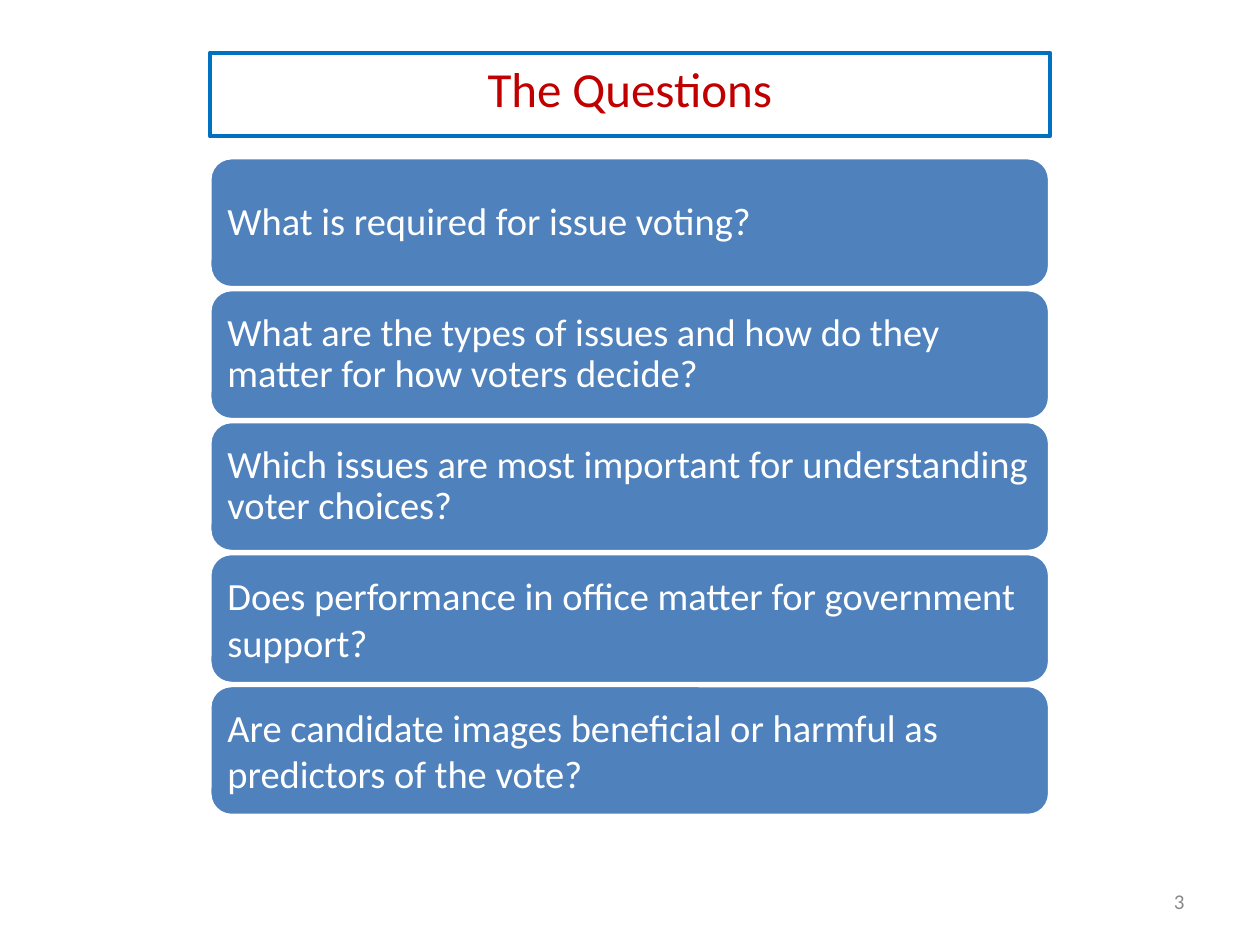
from pptx import Presentation
from pptx.dml.color import RGBColor
from pptx.enum import shapes, text
from pptx.util import Cm, Pt

# Content: question and line spacing
TITLE = "The Questions"
QUESTIONS = [
    ("What is required for issue voting?", 0.9),
    ("What are the types of issues and how do they matter for how voters decide?", 0.9),
    ("Which issues are most important for understanding voter choices?", 0.9),
    ("Does performance in office matter for government support?", 1.0),
    ("Are candidate images beneficial or harmful as predictors of the vote?", 1.0),
]
PAGE_NUMBER = "3"

THEME = {
    "font": "Calibri",
    "title": {"size": 28, "color": "C00000"},
    "question": {"size": 22, "color": "FFFFFF"},
    "number": {"size": 12, "color": "898989"},
    "title_line": "0070C0",
    "panel": "4F81BD",
    "panel_line": "FFFFFF",
}

# Layout
LEFT, WIDTH = Cm(4.23), Cm(16.93)
PANEL_TOP, PANEL_HEIGHT, PANEL_PITCH = Cm(3.18), Cm(2.62), Cm(2.66)
INSET = Cm(0.23)


def place(sp, left, top, width, height):
    sp.left, sp.top, sp.width, sp.height = left, top, width, height


def outline(sp, color, width):
    sp.line.color.rgb = RGBColor.from_string(color)
    sp.line.width = Pt(width)


def write(sp, words, style, align, frame, spacing=1.0):
    tf = sp.text_frame
    for name, value in {"word_wrap": True, "auto_size": text.MSO_AUTO_SIZE.NONE, **frame}.items():
        setattr(tf, name, value)
    p = tf.paragraphs[0]
    p.alignment, p.line_spacing = align, spacing
    r = p.add_run()
    r.text = words
    for name, value in {"name": THEME["font"], "size": Pt(style["size"]), "bold": False}.items():
        setattr(r.font, name, value)
    r.font.color.rgb = RGBColor.from_string(style["color"])


prs = Presentation()
prs.slide_width, prs.slide_height = Cm(25.4), Cm(19.05)
s = prs.slides.add_slide(prs.slide_layouts[5])
middle = {"vertical_anchor": text.MSO_ANCHOR.MIDDLE}

# Title
title = s.shapes.title
place(title, LEFT, Cm(1.06), WIDTH, Cm(1.69))
outline(title, THEME["title_line"], 2.25)
write(title, TITLE, THEME["title"], text.PP_ALIGN.CENTER,
      {"vertical_anchor": text.MSO_ANCHOR.TOP})

# Question panels
margins = {f"margin_{side}": INSET for side in ("left", "top", "right", "bottom")}
for i, (question, spacing) in enumerate(QUESTIONS):
    panel = s.shapes.add_shape(shapes.MSO_SHAPE.ROUNDED_RECTANGLE, LEFT,
                               PANEL_TOP + i * PANEL_PITCH, WIDTH, PANEL_HEIGHT)
    panel.shadow.inherit = False
    panel.fill.solid()
    panel.fill.fore_color.rgb = RGBColor.from_string(THEME["panel"])
    outline(panel, THEME["panel_line"], 2)
    write(panel, question, THEME["question"], text.PP_ALIGN.LEFT, {**middle, **margins}, spacing)

# Page number
number = s.shapes.add_textbox(Cm(18.2), Cm(17.66), Cm(5.93), Cm(1.01))
write(number, PAGE_NUMBER, THEME["number"], text.PP_ALIGN.RIGHT, middle)

prs.save("out.pptx")
